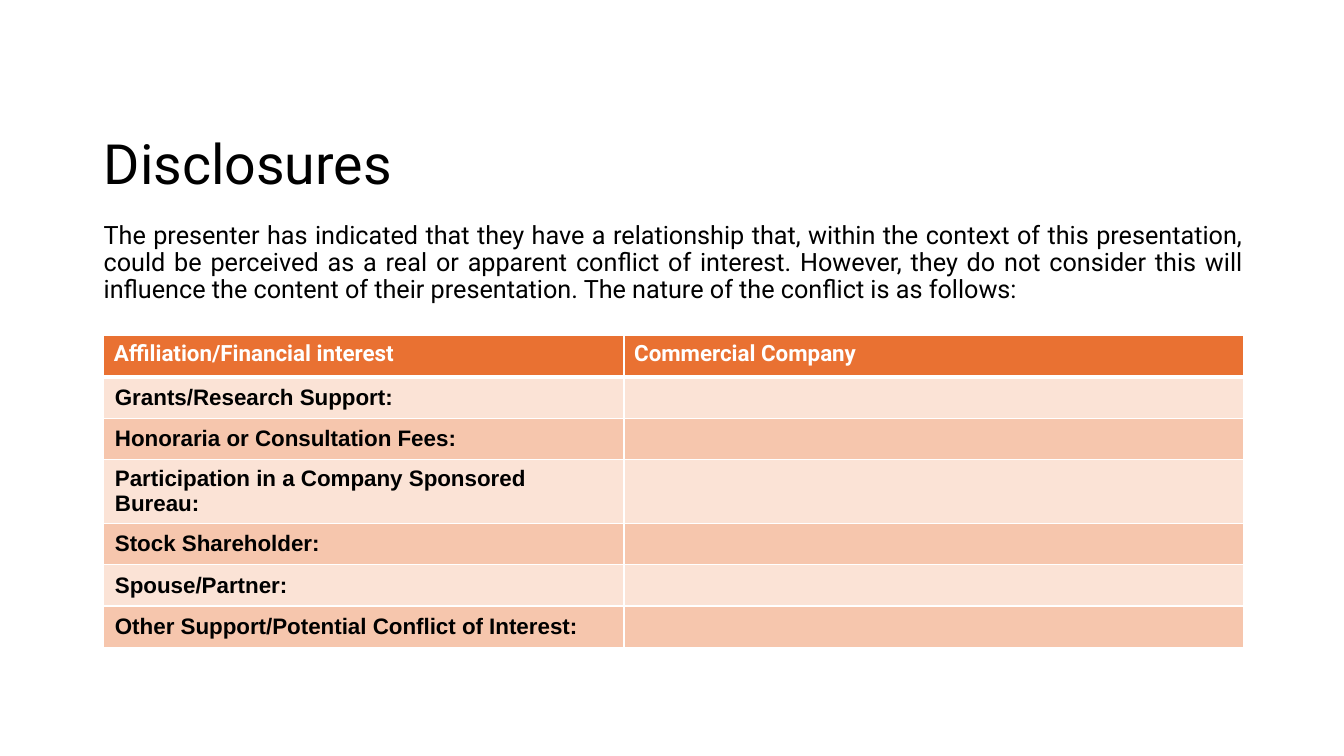
from pptx import Presentation
from pptx.dml.color import RGBColor
from pptx.enum.text import MSO_ANCHOR as Anchor, PP_ALIGN as Align
from pptx.util import Inches, Pt
from lxml.etree import fromstring

NS = "http://schemas.openxmlformats.org/drawingml/2006/main"


def paint(fmt, color):
    """Give a fill or a font colour from a hex string."""
    fmt.rgb = RGBColor.from_string(color)


def write(para, text, size, font, color="000000", bold=False):
    run = para.add_run()
    run.text = text
    run.font.size = Pt(size)
    run.font.name = font
    run.font.bold = bold
    paint(run.font.color, color)


deck = Presentation()
deck.slide_width, deck.slide_height = Inches(13.33), Inches(7.5)
slide = deck.slides.add_slide(deck.slide_layouts[6])

# Title and introduction
intro = (
    "The presenter has indicated that they have a relationship that, within "
    "the context of this presentation, could be perceived as a real or "
    "apparent conflict of interest. However, they do not consider this will "
    "influence the content of their presentation. The nature of the conflict "
    "is as follows:"
)
texts = [
    ("Disclosures", 1.33, 0.68, 39.6, 0.8, Anchor.MIDDLE, Align.LEFT),
    (intro, 2.16, 4.76, 18, 0.9, Anchor.TOP, Align.JUSTIFY),
]
for text, top, height, size, space, anchor, align in texts:
    box = slide.shapes.add_textbox(
        Inches(0.93), Inches(top), Inches(11.5), Inches(height))
    frame = box.text_frame
    frame.word_wrap = True
    frame.vertical_anchor = anchor
    para = frame.paragraphs[0]
    para.alignment = align
    para.line_spacing = space
    write(para, text, size, "Roboto")

# Disclosure table
heads = ["Affiliation/Financial interest", "Commercial Company"]
labels = [
    "Grants/Research Support:",
    "Honoraria or Consultation Fees:",
    "Participation in a Company Sponsored Bureau:",
    "Stock Shareholder:",
    "Spouse/Partner:",
    "Other Support/Potential Conflict of Interest:",
]
rows = [heads] + [[label, ""] for label in labels]
widths = [5.16, 6.14]
high = 0.41
table = slide.shapes.add_table(
    len(rows), len(widths), Inches(1.03), Inches(3.33),
    Inches(sum(widths)), Inches(high * len(rows))).table
for col, width in zip(table.columns, widths):
    col.width = Inches(width)

for r, row in enumerate(rows):
    table.rows[r].height = Inches(high)
    for c, text in enumerate(row):
        cell = table.cell(r, c)
        para = cell.text_frame.paragraphs[0]
        if r == 0:
            fill = "E97132"
            write(para, text, 16, "Roboto", "FFFFFF", True)
        else:
            fill = "FBE3D6" if r % 2 else "F6C6AD"
            cell.vertical_anchor = Anchor.MIDDLE
            cell.margin_left = cell.margin_right = Inches(0.11)
            cell.margin_top = cell.margin_bottom = Inches(0.05)
            if text:
                write(para, text, 16, "Arial", bold=True)

        # White borders, thicker below the header
        props = cell._tc.get_or_add_tcPr()
        for side in "LRTB":
            thick = (r, side) in [(0, "B"), (1, "T")]
            props.append(fromstring(
                f'<a:ln{side} xmlns:a="{NS}" w="{Pt(3 if thick else 1)}">'
                '<a:solidFill><a:srgbClr val="FFFFFF"/></a:solidFill>'
                f'</a:ln{side}>'))
        cell.fill.solid()
        paint(cell.fill.fore_color, fill)

deck.save("out.pptx")
